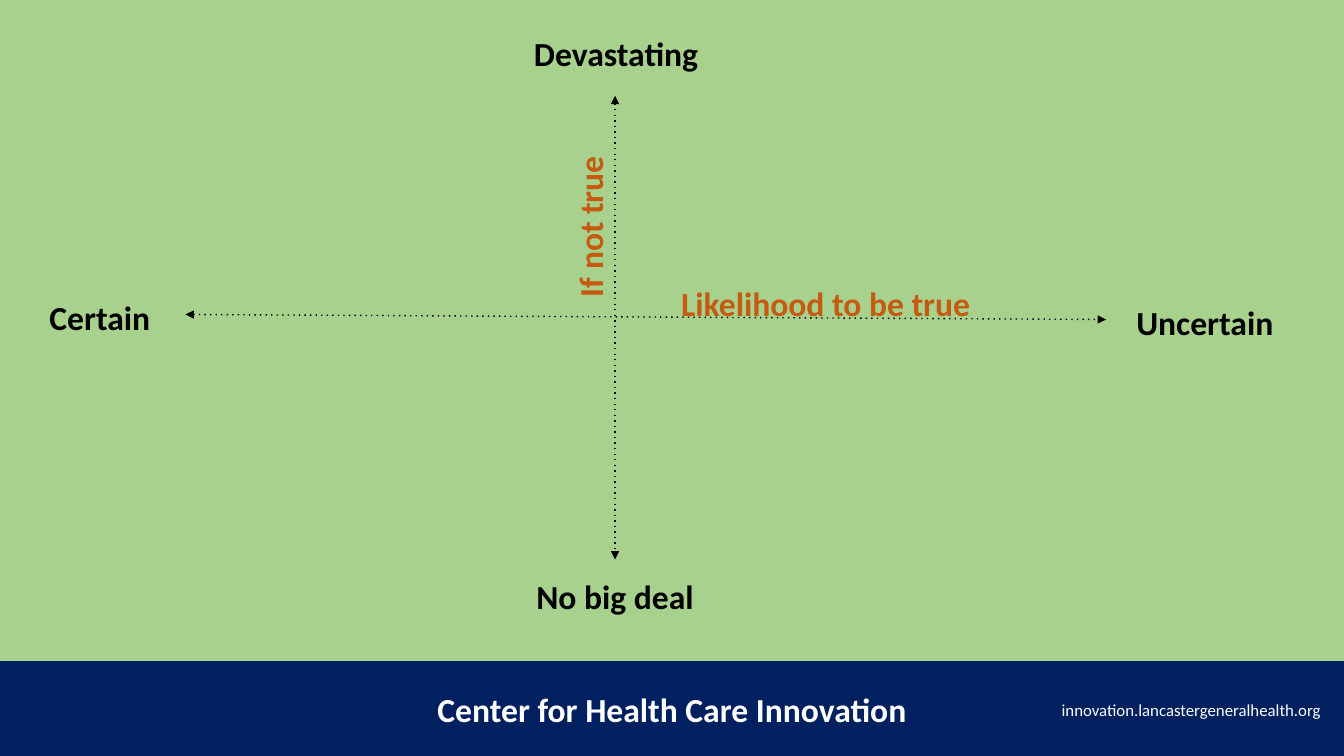
from lxml import etree
from pptx import Presentation, util as u
from pptx.dml.color import RGBColor
from pptx.enum import shapes, text
from pptx.oxml.ns import qn

INK, RUST, NAVY, GREEN, WHITE = "000000", "C55A11", "002060", "A9D18E", "FFFFFF"


def paint(fill, hue):
    """Make a fill solid in the given hex colour."""
    fill.solid()
    fill.fore_color.rgb = RGBColor.from_string(hue)


def label(slide, words, left, top, width, height=0.44, size=24, hue=INK,
          bold=True, align=text.PP_ALIGN.CENTER, turn=0):
    """Add a wrapped line of text."""
    box = slide.shapes.add_textbox(*map(u.Inches, (left, top, width, height)))
    box.rotation = turn
    frame = box.text_frame
    frame.word_wrap = True
    line = frame.paragraphs[0]
    line.alignment = align
    run = line.add_run()
    run.text = words
    font = run.font
    font.name, font.size, font.bold = "Calibri", u.Pt(size), bold
    font.color.rgb = RGBColor.from_string(hue)


def axis(slide, *ends):
    """Add a dotted line with an arrowhead at both ends."""
    line = slide.shapes.add_connector(
        shapes.MSO_CONNECTOR.STRAIGHT, *map(u.Inches, ends))
    line.line.width = u.Pt(1)
    paint(line.line.fill, INK)
    props = line._element.spPr
    stroke = props.find(qn("a:ln"))
    for tag, key, value in (("a:prstDash", "val", "dot"),
                            ("a:headEnd", "type", "triangle"),
                            ("a:tailEnd", "type", "triangle")):
        etree.SubElement(stroke, qn(tag)).set(key, value)
    etree.SubElement(props, qn("a:effectLst"))


def footer(slide):
    """Add the navy band with the centre's name and address."""
    band = slide.shapes.add_shape(
        shapes.MSO_SHAPE.RECTANGLE, *map(u.Inches, (0, 6.56, 13.33, 0.97)))
    band.shadow.inherit = False
    paint(band.fill, NAVY)
    band.line.fill.background()
    label(slide, "Center for Health Care Innovation", 4.15, 6.79, 5.03, 0.5,
          hue=WHITE)
    label(slide, "innovation.lancastergeneralhealth.org", 9.53, 6.89, 3.67, 0.3,
          size=12, hue=WHITE, bold=False, align=text.PP_ALIGN.RIGHT)


def main():
    """Build the assumption map and save it."""
    deck = Presentation()
    deck.slide_width, deck.slide_height = u.Inches(13.33), u.Inches(7.5)
    slide = deck.slides.add_slide(deck.slide_layouts[6])
    paint(slide.background.fill, GREEN)
    footer(slide)
    axis(slide, 6.1, 0.95, 6.1, 5.55)
    axis(slide, 1.84, 3.12, 10.97, 3.17)
    label(slide, "Devastating", 1.11, 0.28, 10)
    label(slide, "No big deal", 1.1, 5.66, 10)
    label(slide, "Certain", 0.14, 2.9, 1.7)
    label(slide, "Uncertain", 11.1, 2.95, 1.7)
    label(slide, "If not true ", 4.44, 1.99, 2.76, hue=RUST, turn=270)
    label(slide, "Likelihood to be true", 6.53, 2.76, 3.32, 0.36, hue=RUST)
    deck.save("out.pptx")


if __name__ == "__main__":
    main()
